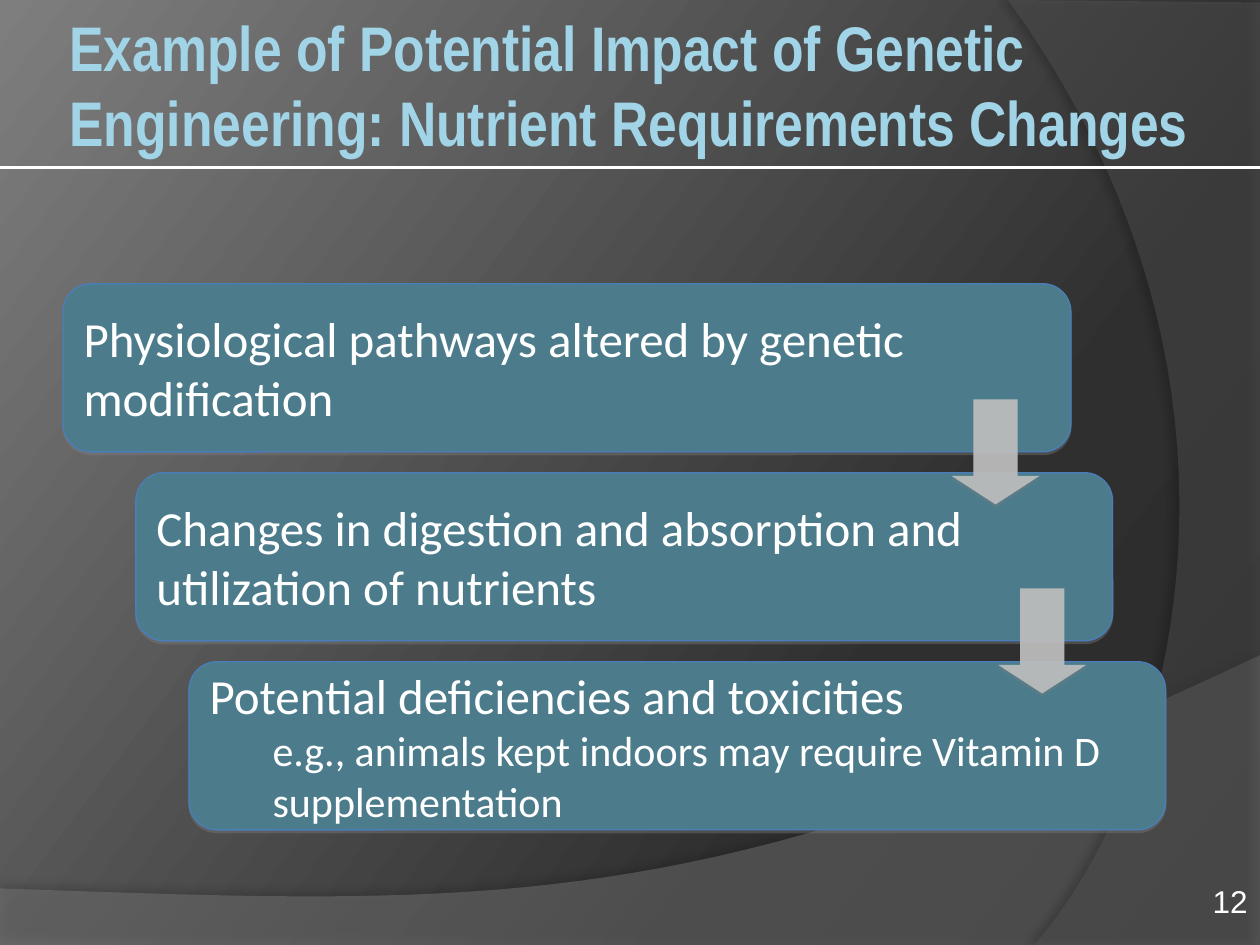
from lxml import etree
from pptx import Presentation
from pptx.dml.color import RGBColor
from pptx.enum.shapes import MSO_CONNECTOR, MSO_SHAPE
from pptx.enum.text import MSO_ANCHOR as Anchor, PP_ALIGN as Align
from pptx.oxml.ns import qn
from pptx.util import Cm, Pt


def rgb(value):
    return RGBColor.from_string(value)


def add_child(parent, tag, **attributes):
    child = etree.SubElement(parent, qn(tag))
    for name, value in attributes.items():
        child.set(name, str(value))
    return child


def bezier(start, first, second, end, steps=40):
    """Points along a cubic curve, start excluded."""
    points = []
    for step in range(1, steps + 1):
        t = step / steps
        weights = ((1 - t) ** 3, 3 * t * (1 - t) ** 2, 3 * t * t * (1 - t), t ** 3)
        points.append(tuple(sum(w * p[axis] for w, p in zip(weights, (start, first, second, end)))
                            for axis in (0, 1)))
    return points


class SlideBuilder:
    TITLE = dict(name="Arial Narrow", size=Pt(36), bold=True, color="A1D4E7")
    NUMBER = dict(name="Arial", size=Pt(18), color="FFFFFF")
    STEP = dict(name="Calibri", size=Pt(28), color="FFFFFF")
    DETAIL = dict(STEP, size=Pt(24))

    def __init__(self, slide):
        self.slide = slide
        self.shapes = slide.shapes

    def background(self, stops, angle):
        fill = self.slide.background.fill
        fill.gradient()
        fill.gradient_angle = angle
        stop_list = next(self.slide.element.iter(qn("a:gsLst")))
        for old_stop in list(stop_list):
            stop_list.remove(old_stop)
        for position, color in stops:
            stop = add_child(stop_list, "a:gs", pos=position * 1000)
            add_child(stop, "a:srgbClr", val=color)

    def paint(self, shape, color, opacity, shadow, outline=None):
        shape.fill.solid()
        shape.fill.fore_color.rgb = rgb(color)
        if opacity < 100:
            swatch = next(shape.element.spPr.iter(qn("a:srgbClr")))
            add_child(swatch, "a:alpha", val=opacity * 1000)
        if outline:
            shape.line.color.rgb = rgb(outline)
            shape.line.width = Pt(0.75)
        else:
            shape.line.fill.background()
        shape.shadow.inherit = False
        tint, strength, blur, distance, direction = shadow
        effects = shape.element.spPr.find(qn("a:effectLst"))
        outer = add_child(effects, "a:outerShdw", blurRad=Pt(blur), dist=Pt(distance),
                          dir=direction * 60000, rotWithShape=0)
        add_child(add_child(outer, "a:srgbClr", val=tint), "a:alpha", val=strength * 1000)

    def swoosh(self, corners, curve, color, opacity, shadow):
        points = corners + bezier(corners[-1], *curve)
        (x, y), *rest = [(Cm(x), Cm(y)) for x, y in points]
        outline = self.shapes.build_freeform(x, y)
        outline.add_line_segments(rest, close=True)
        self.paint(outline.convert_to_shape(), color, opacity, shadow)

    def rule(self, y, width):
        line = self.shapes.add_connector(MSO_CONNECTOR.STRAIGHT, 0, Cm(y), Cm(width), Cm(y))
        line.line.color.rgb = rgb("FFFFFF")
        line.line.width = Pt(2)
        add_child(line.element.spPr, "a:effectLst")

    def fill_text(self, frame, paragraphs, align=Align.LEFT, anchor=Anchor.MIDDLE):
        frame.word_wrap = True
        frame.vertical_anchor = anchor
        for index, (text, style) in enumerate(paragraphs):
            paragraph = frame.paragraphs[0] if index == 0 else frame.add_paragraph()
            paragraph.alignment = align
            if index:
                paragraph.level = 1
                properties = paragraph._p.get_or_add_pPr()
                properties.set("marL", str(Cm(1.27)))
                properties.set("indent", "0")
            run = paragraph.add_run()
            run.text = text
            for name, value in style.items():
                if name == "color":
                    run.font.color.rgb = rgb(value)
                else:
                    setattr(run.font, name, value)

    def text(self, box, content, style, inset=None, **layout):
        frame = self.shapes.add_textbox(*map(Cm, box)).text_frame
        if inset:
            for side in ("left", "top", "right", "bottom"):
                setattr(frame, f"margin_{side}", Cm(inset))
        self.fill_text(frame, [(content, style)], **layout)

    def preset(self, kind, box, adjustments):
        shape = self.shapes.add_shape(kind, *map(Cm, box))
        for index, value in enumerate(adjustments):
            shape.adjustments[index] = value
        return shape

    def step(self, box, texts):
        card = self.preset(MSO_SHAPE.ROUNDED_RECTANGLE, box, [0.167])
        self.paint(card, "4C7C8B", 100, ("808080", 38, 0, 1.6, 90), outline="4A7EBB")
        self.fill_text(card.text_frame, list(zip(texts, (self.STEP, self.DETAIL))))

    def arrow(self, box):
        arrow = self.preset(MSO_SHAPE.DOWN_ARROW, box, [0.5, 0.324])
        self.paint(arrow, "BFBFBF", 90, ("808080", 35, 0, 1.8, 90))


def main():
    deck = Presentation()
    deck.slide_width, deck.slide_height = Cm(25.4), Cm(19.05)
    page = SlideBuilder(deck.slides.add_slide(deck.slide_layouts[6]))

    # Backdrop
    page.background([(0, "282828"), (30, "2F2F2F"), (100, "7E7E7E")], angle=143)
    page.swoosh([(0, 17.91), (0, 19.05), (25.4, 19.05), (25.4, 13.21)],
                [(14.2, 18.52), (9.93, 18.26), (0, 17.91)],
                "7C7C7C", 45, ("000000", 35, 5, 3.5, 270))
    page.swoosh([(25.4, 0.05), (25.4, 19.05), (20.85, 19.05)],
                [(23.75, 15.72), (25.86, 7.62), (20.32, 0)],
                "595959", 40, ("000000", 45, 5, 4, 180))
    page.rule(3.38, 25.4)

    # Title and slide number
    page.text((1.27, 0.1, 23.55, 3.18),
              "Example of Potential Impact of Genetic Engineering: Nutrient Requirements Changes",
              page.TITLE, inset=0.13)
    page.text((19.48, 17.65, 5.92, 1.02), "12", page.NUMBER,
              align=Align.RIGHT, anchor=Anchor.TOP)

    # Staggered steps
    top, pitch = 5.72, 3.81
    steps = [
        (1.27, 20.32, ["Physiological pathways altered by genetic modification"]),
        (2.74, 19.69, ["Changes in digestion and absorption and utilization of nutrients"]),
        (3.81, 19.69, ["Potential deficiencies and toxicities",
                       "e.g., animals kept indoors may require Vitamin D supplementation"]),
    ]
    for row, (left, width, texts) in enumerate(steps):
        page.step((left, top + row * pitch, width, 3.39), texts)

    # Arrows between steps
    for row, left in enumerate((19.18, 20.12)):
        page.arrow((left, top + 2.33 + row * pitch, 1.78, 2.12))

    deck.save("out.pptx")


if __name__ == "__main__":
    main()
